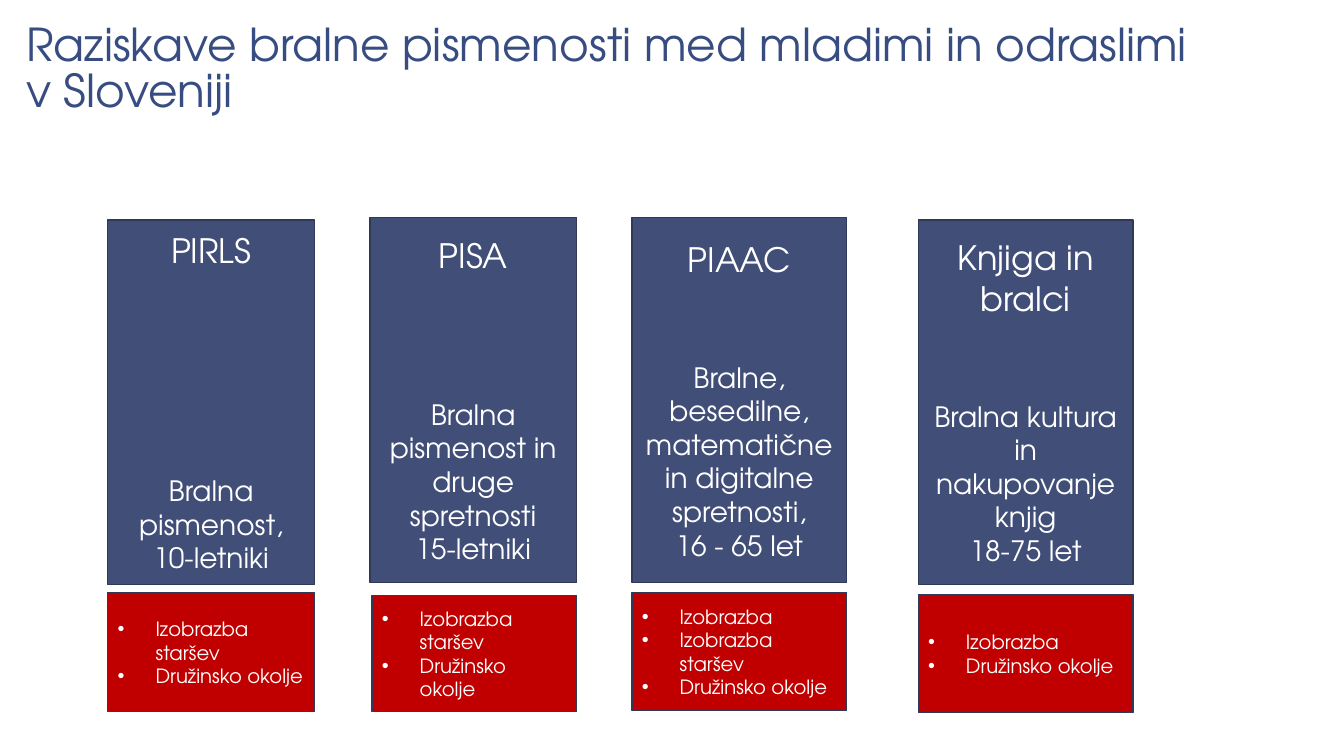
import pptx
import pptx.util
import pptx.dml.color
import pptx.enum.shapes
import pptx.enum.text
from lxml import etree

Pt = pptx.util.Pt
ALIGN = pptx.enum.text.PP_ALIGN
ANCHOR = pptx.enum.text.MSO_ANCHOR
FONT = "TeX Gyre Adventor"
COLORS = {"title": "374C81", "survey": "414E77", "factors": "C00000",
          "outline": "303A58", "text": "FFFFFF"}
HEADING_LINE = 29  # height of one heading line

# Survey box, heading, gap in heading lines, description, factor box, factors
SURVEYS = [
    ((77, 157, 147.6, 260.6), "PIRLS", 5,
     ["Bralna pismenost,", "10-letniki"],
     (77, 423.4, 147.6, 85), ["Izobrazba staršev", "Družinsko okolje"]),
    ((264.2, 155.5, 147.6, 260.6), "PISA", 3,
     ["Bralna pismenost in druge spretnosti", "15-letniki"],
     (265.7, 425.5, 146.2, 82.8), ["Izobrazba staršev", "Družinsko okolje"]),
    ((451.4, 155.5, 153.4, 260.6), "PIAAC", 2,
     ["Bralne, besedilne, matematične in digitalne spretnosti,", "16 - 65 let"],
     (451.4, 423.4, 153.4, 84.2),
     ["Izobrazba", "Izobrazba staršev", "Družinsko okolje"]),
    ((655.9, 157, 153.4, 260.6), "Knjiga in bralci", 2,
     ["Bralna kultura in nakupovanje knjig", "18-75 let"],
     (655.9, 424.8, 153.4, 84.2), ["Izobrazba", "Družinsko okolje"]),
]


def rgb(name):
    return pptx.dml.color.RGBColor.from_string(COLORS[name])


def set_font(paragraph, size, color):
    paragraph.font.name = FONT
    paragraph.font.size = Pt(size)
    paragraph.font.color.rgb = rgb(color)


def add_bullet(paragraph, indent):
    properties = paragraph._p.get_or_add_pPr()
    properties.set("marL", str(Pt(indent)))
    properties.set("indent", str(-Pt(indent)))
    bullet_font = etree.SubElement(properties, pptx.oxml.ns.qn("a:buFont"))
    bullet_font.set("typeface", "Arial")
    bullet = etree.SubElement(properties, pptx.oxml.ns.qn("a:buChar"))
    bullet.set("char", "•")


def add_box(slide, box, color, lines):
    """Draw an outlined rectangle and return its paragraphs."""
    shape = slide.shapes.add_shape(
        pptx.enum.shapes.MSO_SHAPE.RECTANGLE, *map(Pt, box))
    shape.shadow.inherit = False
    shape.fill.solid()
    shape.fill.fore_color.rgb = rgb(color)
    shape.line.color.rgb = rgb("outline")
    shape.line.width = Pt(1)
    frame = shape.text_frame
    frame.word_wrap = True
    frame.vertical_anchor = ANCHOR.MIDDLE
    frame.text = "\n".join(lines)
    return frame.paragraphs


def add_title(slide, box, text):
    frame = slide.shapes.add_textbox(*map(Pt, box)).text_frame
    frame.word_wrap = True
    frame.vertical_anchor = ANCHOR.BOTTOM
    frame.margin_left = frame.margin_right = Pt(9.4)
    frame.margin_top = frame.margin_bottom = Pt(5)
    frame.text = text
    paragraph = frame.paragraphs[0]
    paragraph.line_spacing = 0.85
    set_font(paragraph, 32.4, "title")


def add_survey(slide, box, heading, gap_lines, description):
    paragraphs = add_box(slide, box, "survey", [heading] + description)
    for index, paragraph in enumerate(paragraphs):
        paragraph.alignment = ALIGN.CENTER
        set_font(paragraph, 20 if index else 24, "text")
    paragraphs[1].space_before = Pt(gap_lines * HEADING_LINE)


def add_factors(slide, box, factors):
    for paragraph in add_box(slide, box, "factors", factors):
        paragraph.alignment = ALIGN.LEFT
        add_bullet(paragraph, 27)
        set_font(paragraph, 14, "text")


def main():
    presentation = pptx.Presentation()
    presentation.slide_width = Pt(960)
    presentation.slide_height = Pt(540)
    slide = presentation.slides.add_slide(presentation.slide_layouts[6])

    # Title
    add_title(slide, (9.4, 15.1, 850.3, 73.4),
              "Raziskave bralne pismenosti med mladimi in odraslimi v Sloveniji")

    # Surveys with their background factors below
    for box, heading, gap_lines, description, factor_box, factors in SURVEYS:
        add_survey(slide, box, heading, gap_lines, description)
        add_factors(slide, factor_box, factors)

    presentation.save("out.pptx")


if __name__ == "__main__":
    main()
